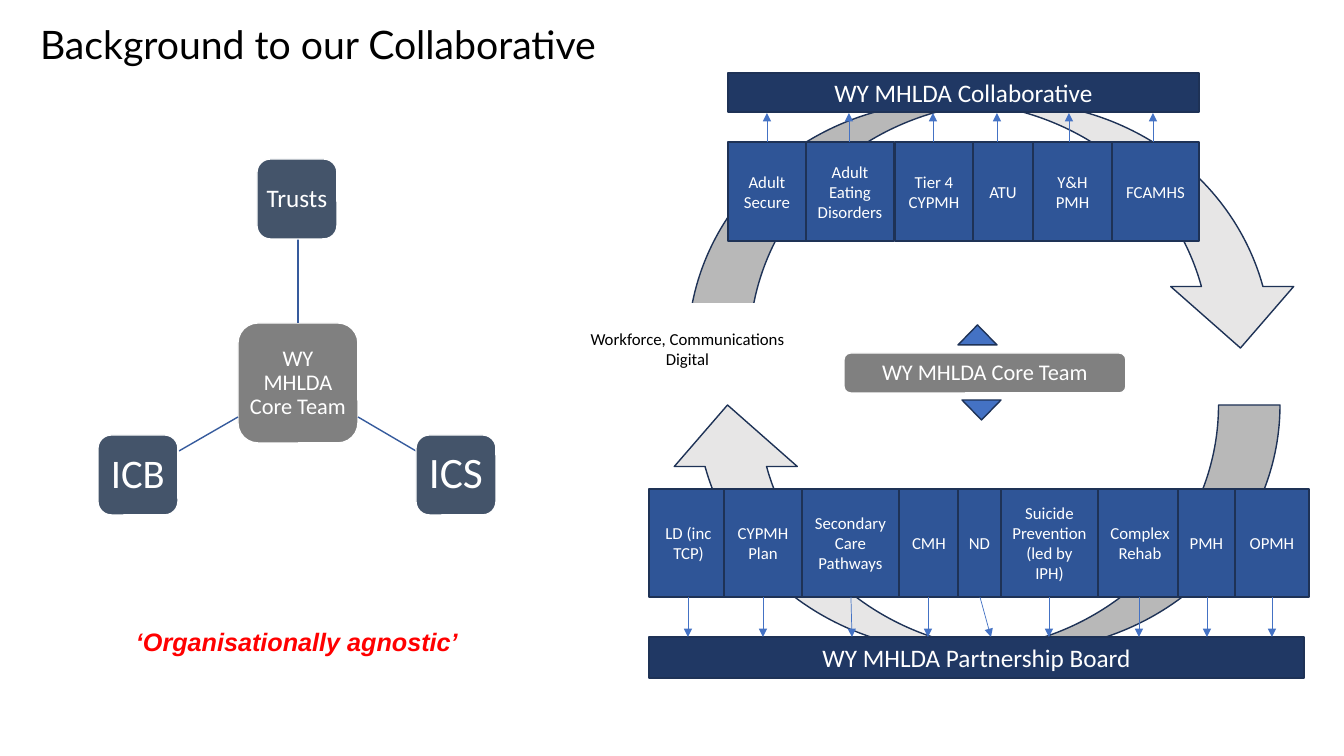
from pptx import Presentation
from pptx.dml.color import RGBColor
from pptx.enum.shapes import MSO_CONNECTOR, MSO_SHAPE
from pptx.enum.text import MSO_ANCHOR, PP_ALIGN
from pptx.oxml.ns import qn
from pptx.util import Pt
from lxml.etree import SubElement

PX = 12192000 / 1344
COLORS = {
    "white": "FFFFFF", "black": "000000", "red": "FF0000", "pale": "E7E6E6",
    "outline": "1E3256", "navy": "203864", "cell": "2F5597", "accent": "4472C4",
    "slate": "44546A", "gray": "808080", "link": "365B9D",
}


def rgb(name):
    return RGBColor.from_string(COLORS[name])


def px(*values):
    return [round(v * PX) for v in values]


prs = Presentation()
prs.slide_width, prs.slide_height = px(1344, 756)
s = prs.slides.add_slide(prs.slide_layouts[6])


def add_box(kind, box, fill, line="outline", text="", size=12, color="white",
            inset=(10, 5), spacing=1.0, rotation=0):
    sp = s.shapes.add_shape(kind, *px(*box))
    sp.shadow.inherit = False
    sp.rotation = rotation
    sp.fill.solid()
    sp.fill.fore_color.rgb = rgb(fill)
    sp.line.color.rgb = rgb(line)
    sp.line.width = Pt(1)
    tf = sp.text_frame
    tf.text = text
    x, y = px(*inset)
    frame_format = {"word_wrap": True, "vertical_anchor": MSO_ANCHOR.MIDDLE,
                    "margin_left": x, "margin_right": x,
                    "margin_top": y, "margin_bottom": y}
    for key, value in frame_format.items():
        setattr(tf, key, value)
    for p in tf.paragraphs:
        p.alignment = PP_ALIGN.CENTER
        p.line_spacing = spacing
        p.font.name = "Calibri"
        p.font.size = Pt(size)
        for r in p.runs:
            r.font.name = "Calibri"
            r.font.size = Pt(size)
            r.font.color.rgb = rgb(color)


def add_line(ends, color, width, arrow=False):
    c = s.shapes.add_connector(MSO_CONNECTOR.STRAIGHT, *px(*ends))
    c.line.color.rgb = rgb(color)
    c.line.width = Pt(width)
    if arrow:
        SubElement(c.line._get_or_add_ln(), qn("a:tailEnd"), type="triangle")
    SubElement(c._element.spPr, qn("a:effectLst"))


# Circulating arrows
for left, top, rotation in [(666, 405, 180), (688, 102, 0)]:
    add_box(MSO_SHAPE.CURVED_DOWN_ARROW, (left, top, 614, 246), "pale", rotation=rotation)

# Title and tagline
labels = [
    ("Background to our Collaborative", (20, 14, 1047, 80), 20,
     {"name": "Lato", "size": Pt(28)}, "black"),
    ("‘Organisationally agnostic’", (126, 620, 402, 40), 10,
     {"name": "Arial", "size": Pt(18), "bold": True, "italic": True}, "red"),
]
for text, box, inset, font_format, color in labels:
    tf = s.shapes.add_textbox(*px(*box)).text_frame
    tf.word_wrap = True
    tf.margin_left, tf.margin_top = px(inset, 6)
    r = tf.paragraphs[0].add_run()
    r.text = text
    for key, value in font_format.items():
        setattr(r.font, key, value)
    r.font.color.rgb = rgb(color)

# Core team and its partners
add_box(MSO_SHAPE.ROUNDED_RECTANGLE, (238, 323, 120, 120), "gray", "white",
        "WY MHLDA Core Team", 16, inset=(4, 4), spacing=0.9)
partners = [
    ("Trusts", 257, 159, 18, (298, 323, 298, 239)),
    ("ICS", 416, 435, 31, (358, 417, 416, 451)),
    ("ICB", 98, 435, 29, (238, 417, 179, 451)),
]
for text, left, top, size, link in partners:
    add_line(link, "link", 1)
    add_box(MSO_SHAPE.ROUNDED_RECTANGLE, (left, top, 80, 80), "slate", "white",
            text, size, inset=(5, 5), spacing=0.9)

# Headline bars
bars = [
    ("WY MHLDA Collaborative", (728, 73, 471, 39)),
    ("WY MHLDA Partnership Board", (649, 637, 655, 41)),
]
for text, box in bars:
    add_box(MSO_SHAPE.RECTANGLE, box, "navy", text=text, size=18)

# Workstreams: text, left, width, arrow start x, arrow end x
collaborative = [
    ("Adult Secure", 728, 78, 767, 767),
    ("Adult Eating Disorders", 806, 88, 849, 849),
    ("Tier 4 CYPMH", 895, 78, 933, 933),
    ("ATU", 973, 60, 997, 997),
    ("Y&H\nPMH", 1033, 79, 1069, 1069),
    ("FCAMHS", 1112, 87, 1153, 1153),
]
partnership = [
    ("LD (inc TCP)", 649, 79, 688, 688),
    ("CYPMH Plan", 724, 78, 763, 763),
    ("Secondary Care Pathways", 802, 97, 851, 852),
    ("CMH", 899, 60, 928, 928),
    ("ND", 958, 43, 980, 991),
    ("Suicide Prevention (led by IPH)", 1001, 97, 1049, 1049),
    ("Complex Rehab", 1098, 84, 1139, 1139),
    ("PMH", 1178, 57, 1207, 1207),
    ("OPMH", 1235, 74, 1272, 1272),
]
rows = [(collaborative, 142, 99, 142, 113), (partnership, 489, 108, 597, 637)]
for cells, top, height, arrow_from, arrow_to in rows:
    for text, left, width, x1, x2 in cells:
        add_box(MSO_SHAPE.RECTANGLE, (left, top, width, height), "cell", text=text)
        add_line((x1, arrow_from, x2, arrow_to), "accent", 0.5, arrow=True)

# Central team bar with up and down pointers
add_box(MSO_SHAPE.ROUNDED_RECTANGLE, (844, 353, 282, 40), "gray", "white",
        "WY MHLDA Core Team", 16, inset=(4, 4), spacing=0.9)
for left, top, rotation in [(958, 325, 0), (962, 400, 180)]:
    add_box(MSO_SHAPE.ISOSCELES_TRIANGLE, (left, top, 39, 20), "accent", rotation=rotation)

# Enablers
add_box(MSO_SHAPE.RECTANGLE, (541, 304, 293, 89), "white", "white",
        "Workforce, Communications\nDigital", 12, "black")

prs.save("out.pptx")
